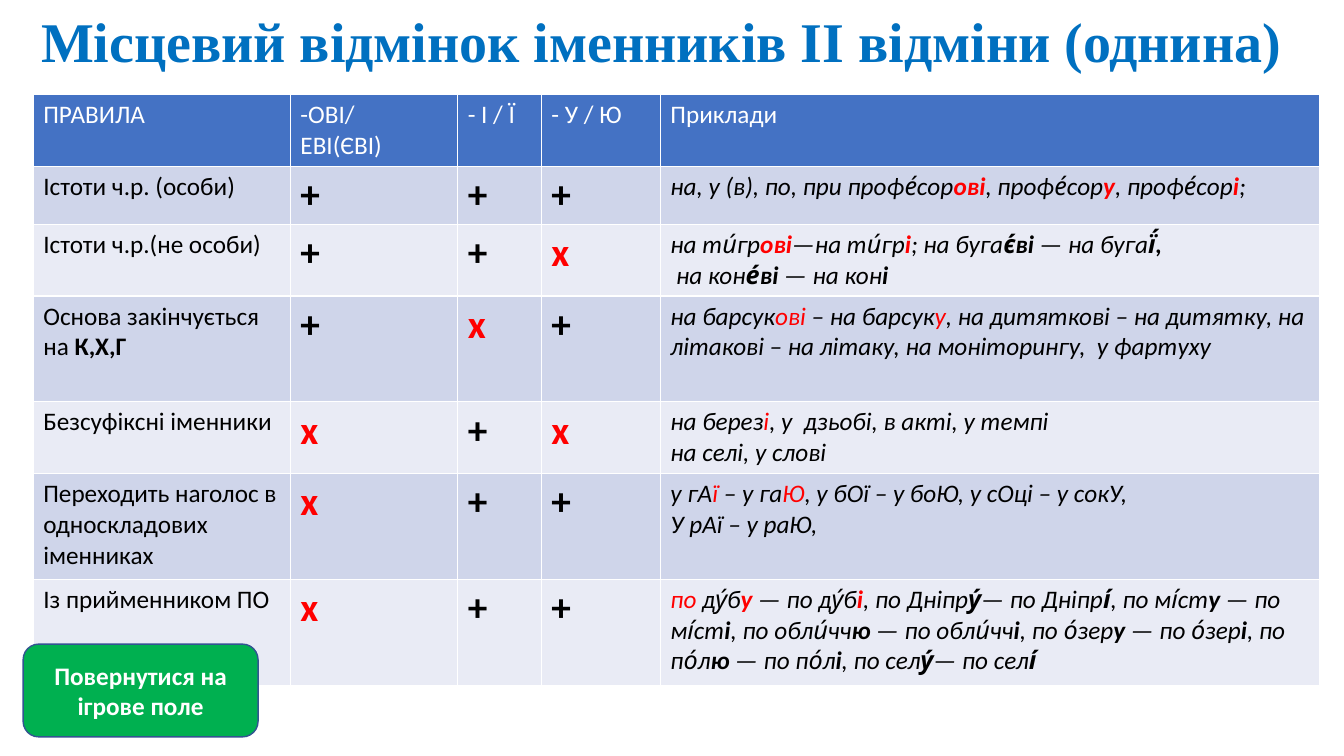
from pptx import Presentation
from pptx.dml.color import RGBColor
from pptx.enum.shapes import MSO_SHAPE as Shape
from pptx.enum.text import MSO_ANCHOR as Anchor, PP_ALIGN as Align
from pptx.util import Inches, Pt

COLORS = {
    "title": "0070C0",
    "header": "4472C4",
    "odd": "CFD5EA",
    "even": "E9EBF5",
    "text": "000000",
    "accent": "FF0000",
    "white": "FFFFFF",
    "button": "00B050",
    "outline": "325491",
}

STYLES = {
    "<": {"bold": True},
    "{": {"color": "accent"},
    "[": {"color": "accent", "bold": True},
}
CLOSERS = ">}]"

COLUMN_WIDTHS = [2.55, 1.66, 0.83, 1.18, 6.54]
ROW_HEIGHTS = [0.71, 0.57, 0.71, 1.05, 0.71, 1.05, 1.05]
HEADERS = ["ПРАВИЛА", "-ОВІ/\nЕВІ(ЄВІ)", "- І / Ї", "- У / Ю", "Приклади"]
RULES = [
    ("Істоти ч.р. (особи)", "+++",
     "на, у (в), по, при профе́сор[ові], профе́сор[у], профе́сор[і];"),
    ("Істоти ч.р.(не особи)", "++х",
     "на ти́гр[ові]—на ти́гр[і]; на буга<є́ві >— на буга<ї́,>\n"
     "< >на кон<е́ві >— на кон<і>"),
    ("Основа закінчується на <К,Х,Г>", "+х+",
     "на барсук{ові} – на барсук{у}, на дитяткові – на дитятку, "
     "на літакові – на літаку, на моніторингу,  у фартуху"),
    ("Безсуфіксні іменники", "х+х",
     "на берез{і}, у  дзьобі, в акті, у темпі\nна селі, у слові"),
    ("Переходить наголос в односкладових іменниках", "х++",
     "у гА{ї }– у га{Ю}, у бОї – у боЮ, у сОці – у сокУ,\nУ рАї – у раЮ,"),
    ("Із прийменником ПО", "х++",
     "{по }ду́б[у ]— по ду́б[і], по Дніпр<у́>— по Дніпр<і́>, "
     "по мі́ст<у >— по мі́ст<і>, по обли́чч<ю >— по обли́чч<і>, "
     "по о́зер<у >— по о́зер<і>, по по́л<ю >— по по́л<і>, "
     "по сел<у́>— по сел<і́>"),
]


def rgb(name):
    return RGBColor.from_string(COLORS[name])


def split_runs(line):
    runs, text, style = [], "", {}
    for letter in line:
        if letter in STYLES or letter in CLOSERS:
            if text:
                runs.append((text, style))
            text, style = "", STYLES.get(letter, {})
        else:
            text += letter
    return runs + [(text, style)] if text else runs


def write_text(frame, text, align=Align.LEFT, **base):
    for index, line in enumerate(text.split("\n")):
        paragraph = frame.paragraphs[0] if index == 0 else frame.add_paragraph()
        paragraph.alignment = align
        for run_text, style in split_runs(line):
            run = paragraph.add_run()
            run.text = run_text
            values = {"name": "Calibri", "size": 18, "bold": False,
                      "italic": False, "color": "text", **base, **style}
            run.font.color.rgb = rgb(values.pop("color"))
            values["size"] = Pt(values["size"])
            for attribute, value in values.items():
                setattr(run.font, attribute, value)


def fill_row(row, texts, formats, fill):
    for cell, text, format_values in zip(row.cells, texts, formats):
        cell.fill.solid()
        cell.fill.fore_color.rgb = rgb(fill)
        write_text(cell.text_frame, text, **format_values)


def add_rules_table(slide, left, top):
    table = slide.shapes.add_table(
        len(ROW_HEIGHTS), len(COLUMN_WIDTHS), Inches(left), Inches(top),
        Inches(sum(COLUMN_WIDTHS)), Inches(sum(ROW_HEIGHTS))).table
    for column, width in zip(table.columns, COLUMN_WIDTHS):
        column.width = Inches(width)
    for row, height in zip(table.rows, ROW_HEIGHTS):
        row.height = Inches(height)
    fill_row(table.rows[0], HEADERS, [{"color": "white"}] * len(HEADERS), "header")
    for number, (rule, marks, examples) in enumerate(RULES, 1):
        mark_formats = [{"size": 28, "bold": True,
                         "color": "text" if mark == "+" else "accent"}
                        for mark in marks]
        fill_row(table.rows[number], [rule, *marks, examples],
                 [{}, *mark_formats, {"italic": True}],
                 "odd" if number % 2 else "even")


def add_title(slide, left, top, width, height):
    box = slide.shapes.add_textbox(*map(Inches, (left, top, width, height)))
    box.text_frame.word_wrap = False
    write_text(box.text_frame, "Місцевий відмінок іменників ІІ відміни (однина)",
               Align.CENTER, name="Times New Roman", size=40, bold=True,
               color="title")


def add_return_button(slide, left, top, width, height):
    button = slide.shapes.add_shape(
        Shape.ROUNDED_RECTANGLE, *map(Inches, (left, top, width, height)))
    button.shadow.inherit = False
    button.fill.solid()
    button.fill.fore_color.rgb = rgb("button")
    button.line.color.rgb = rgb("outline")
    button.line.width = Pt(1)
    button.text_frame.word_wrap = True
    button.text_frame.vertical_anchor = Anchor.MIDDLE
    write_text(button.text_frame, "Повернутися на ігрове поле", Align.CENTER,
               bold=True, color="white")


def main():
    presentation = Presentation()
    presentation.slide_width = Inches(13.33)
    presentation.slide_height = Inches(7.5)
    slide = presentation.slides.add_slide(presentation.slide_layouts[6])
    add_rules_table(slide, 0.33, 0.94)
    add_title(slide, 0.24, 0.02, 12.64, 0.77)
    add_return_button(slide, 0.23, 6.39, 2.33, 0.92)
    presentation.save("out.pptx")


if __name__ == "__main__":
    main()
